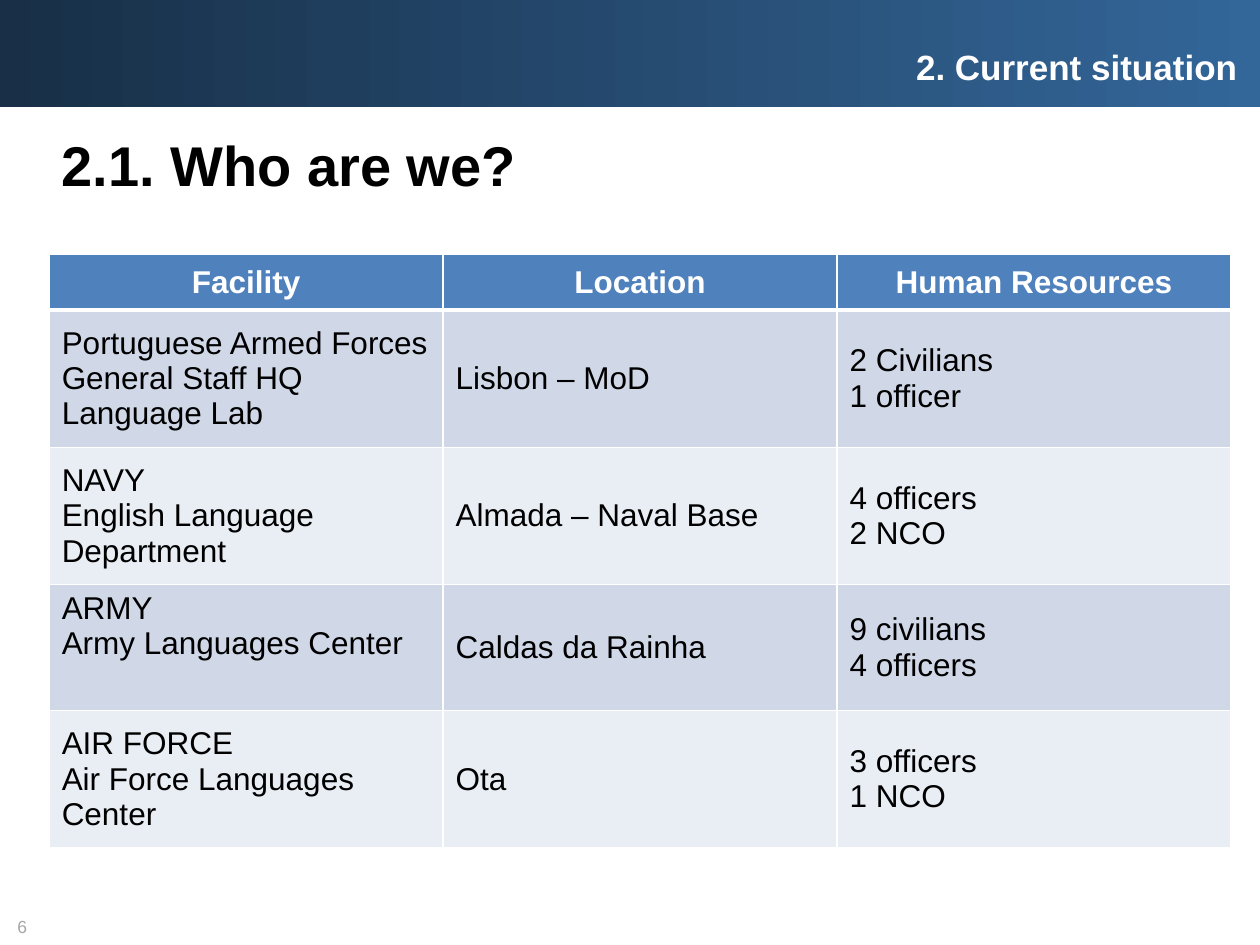
from pptx import Presentation
from pptx.dml.color import RGBColor
from pptx.enum.shapes import MSO_SHAPE
from pptx.enum.text import MSO_ANCHOR, PP_ALIGN
from pptx.oxml import parse_xml
from pptx.oxml.ns import nsdecls
from pptx.util import Inches, Pt

WHITE = RGBColor(0xFF, 0xFF, 0xFF)
BLACK = RGBColor(0, 0, 0)
GRAY = RGBColor(0xA6, 0xA6, 0xA6)
NAVY = RGBColor(0x18, 0x2F, 0x47)
STEEL = RGBColor(0x33, 0x66, 0x99)
BLUE = RGBColor(0x4F, 0x81, 0xBD)
BANDS = RGBColor(0xE9, 0xED, 0xF4), RGBColor(0xD0, 0xD8, 0xE8)

LABELS = [
    ("6", (0.04, 7.22, 0.51, 0.27), 10, GRAY, False, PP_ALIGN.LEFT),
    ("2. Current situation", (0.78, 0.31, 9.14, 0.44), 20, WHITE, True, PP_ALIGN.RIGHT),
    ("2.1. Who are we?", (0.39, 0.99, 9.38, 0.64), 32, BLACK, True, PP_ALIGN.LEFT),
]
ROWS = [
    ("Facility", "Location", "Human Resources"),
    ("Portuguese Armed Forces General Staff HQ\nLanguage Lab", "Lisbon – MoD",
     "2 Civilians\n1 officer"),
    ("NAVY\nEnglish Language Department", "Almada – Naval Base", "4 officers\n2 NCO"),
    ("ARMY\nArmy Languages Center", "Caldas da Rainha", "9 civilians\n4 officers"),
    ("AIR FORCE\nAir Force Languages Center", "Ota", "3 officers\n1 NCO"),
]
TALLS = [0.44, 1.09, 1.09, 1, 1.09]
LEFT, TOP, WIDE = 0.39, 2.02, 9.38


def write(frame, text, size, color, bold, align):
    frame.text = text
    for para in frame.paragraphs:
        para.alignment = align
        font = para.font
        font.name, font.size, font.bold = "Arial", Pt(size), bold
        font.color.rgb = color


def border(cell, head):
    props = cell._tc.get_or_add_tcPr()
    for at, side in enumerate(("lnL", "lnR", "lnT", "lnB")):
        width = Pt(3 if head and side == "lnB" else 1)
        props.insert(at, parse_xml(
            f'<a:{side} {nsdecls("a")} w="{width}"><a:solidFill>'
            f'<a:srgbClr val="{WHITE}"/></a:solidFill></a:{side}>'))


deck = Presentation()
deck.slide_width, deck.slide_height = Inches(10), Inches(7.5)
slide = deck.slides.add_slide(deck.slide_layouts[6])
shapes = slide.shapes

band = shapes.add_shape(MSO_SHAPE.RECTANGLE, 0, 0, deck.slide_width, Inches(0.85))
band.shadow.inherit = False
band.line.fill.background()
band.fill.gradient()
band.fill.gradient_angle = 0
for stop, color in zip(band.fill.gradient_stops, (NAVY, STEEL)):
    stop.color.rgb = color

for text, area, *style in LABELS:
    frame = shapes.add_textbox(*map(Inches, area)).text_frame
    frame.word_wrap = True
    write(frame, text, *style)

table = shapes.add_table(len(ROWS), len(ROWS[0]), Inches(LEFT), Inches(TOP),
                         Inches(WIDE), Inches(sum(TALLS))).table
for r, (texts, tall) in enumerate(zip(ROWS, TALLS)):
    table.rows[r].height = Inches(tall)
    head = r == 0
    for c, text in enumerate(texts):
        cell = table.cell(r, c)
        raised = text.startswith("ARMY")
        cell.vertical_anchor = MSO_ANCHOR.TOP if raised else MSO_ANCHOR.MIDDLE
        cell.fill.solid()
        cell.fill.fore_color.rgb = BLUE if head else BANDS[r % 2]
        border(cell, head)
        write(cell.text_frame, text, 18, WHITE if head else BLACK, head,
              PP_ALIGN.CENTER if head else PP_ALIGN.LEFT)

deck.save("out.pptx")
